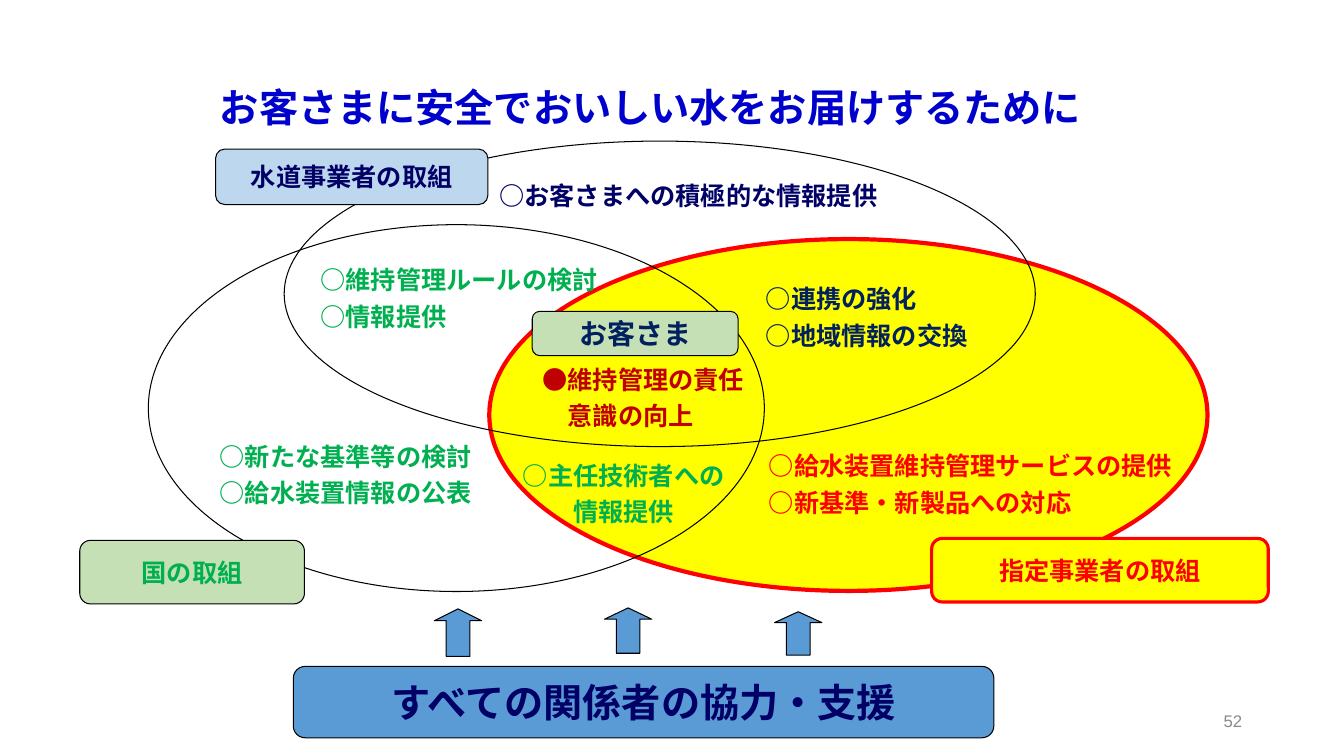
from lxml import etree
from pptx import Presentation
from pptx.dml.color import RGBColor
from pptx.enum.shapes import MSO_SHAPE as SHAPE
from pptx.enum.text import MSO_ANCHOR as ANCHOR, PP_ALIGN as ALIGN
from pptx.oxml.ns import qn
from pptx.util import Pt

BODY_FONT, TITLE_FONT, NUMBER_FONT = "Karla", "Noto Sans CJK JP", "Arial"
BLACK, RED, YELLOW, GREEN = "000000", "FF0000", "FFFF00", "00B050"
NAVY, DARK_BLUE, BLUE, PALE_GREEN = "000066", "002060", "5B9BD5", "C5E0B4"
TITLE_BLUE, PALE_BLUE, DARK_RED, GREY = "0000CC", "BDD7EE", "C00000", "898989"

TITLE = ("お客さまに安全でおいしい水をお届けするために", (150, 53.5, 648, 49.5))
PAGE_NUMBER = ("52", (678.5, 500.5, 216, 28.5))

# box, fill, line colour, line width
CONTRACTOR_CIRCLE = ((349.5, 170.8, 513, 251.3), YELLOW, RED, 3)
UTILITY_CIRCLE = ((203, 100.8, 536.5, 218.2), None, BLACK, 0.75)
STATE_CIRCLE = ((106, 160.5, 440, 262), None, BLACK, 0.75)

# box, colour, lines as (text, indent in characters)
NOTES = [
    ((542.2, 307.5, 316, 76.3), RED,
     [("○給水装置維持管理サービスの提供", 0), ("○新基準・新製品への対応", 0)]),
    ((349.5, 122.4, 290, 34), NAVY, [("○お客さまへの積極的な情報提供", 0)]),
    ((221.8, 190, 242.6, 45.4), GREEN,
     [("○維持管理ルールの検討", 0), ("○情報提供", 0)]),
    ((380.4, 258.8, 170, 50.4), DARK_RED,
     [("●維持管理の責任", 0), ("意識の向上", 1)]),
    ((540, 198, 198.7, 57), DARK_BLUE,
     [("○連携の強化", 0), ("○地域情報の交換", 0)]),
    ((366.5, 327, 165.6, 51), GREEN,
     [("○主任技術者への", 0), ("情報提供", 2)]),
    ((149.8, 306, 224.6, 65.5), GREEN,
     [("○新たな基準等の検討", 0), ("○給水装置情報の公表", 0)]),
]

# text, box, fill, line colour, line width, text size, text colour
LABELS = [
    ("水道事業者の取組", (154, 106.5, 194.5, 39.6), PALE_BLUE, BLACK, 0.75, 18, NAVY),
    ("指定事業者の取組", (665.5, 384.6, 240.5, 45.4), YELLOW, RED, 2.25, 18, RED),
    ("国の取組", (57, 386, 160.5, 45.4), PALE_GREEN, BLACK, 0.75, 18, GREEN),
    ("すべての関係者の協力・支援", (209.5, 476, 500.4, 51), BLUE, BLACK, 0.75, 28, NAVY),
    ("お客さま", (380.2, 222.4, 147, 31.6), PALE_GREEN, BLACK, 0.75, 20, DARK_BLUE),
]

ARROW_LEFT, ARROW_STEP, ARROW_WIDTH = 310.3, 121.5, 33.8
ARROWS = [(434.9, 34), (434.2, 32.4), (437, 31)]  # top, height


def rgb(hex_string):
    return RGBColor.from_string(hex_string)


def points(box):
    return [Pt(v) for v in box]


def add_line(tf, text, size, color, font=BODY_FONT, bold=True, align=ALIGN.LEFT, indent=0):
    """Write one paragraph, reusing the empty one a new frame starts with."""
    p = tf.paragraphs[0]
    if p.runs:
        p = tf.add_paragraph()
        p.space_before = Pt(4.5)
    p.alignment = align
    if indent:
        p._p.get_or_add_pPr().set("marL", str(Pt(indent * size)))
    r = p.add_run()
    r.text = text
    r.font.size, r.font.bold, r.font.name = Pt(size), bold, font
    r.font.color.rgb = rgb(color)
    etree.SubElement(r._r.get_or_add_rPr(), qn("a:ea")).set("typeface", font)
    return p


def add_text_box(box):
    tf = s.shapes.add_textbox(*points(box)).text_frame
    tf.word_wrap = True
    tf.vertical_anchor = ANCHOR.MIDDLE
    return tf


def add_outlined(kind, box, fill, line, width):
    sp = s.shapes.add_shape(kind, *points(box))
    sp.shadow.inherit = False
    if fill:
        sp.fill.solid()
        sp.fill.fore_color.rgb = rgb(fill)
    else:
        sp.fill.background()
    sp.line.color.rgb = rgb(line)
    sp.line.width = Pt(width)
    return sp


prs = Presentation()
prs.slide_width, prs.slide_height = Pt(960), Pt(540)
s = prs.slides.add_slide(prs.slide_layouts[6])

for circle in (CONTRACTOR_CIRCLE, UTILITY_CIRCLE, STATE_CIRCLE):
    add_outlined(SHAPE.OVAL, *circle)

text, box = TITLE
add_line(add_text_box(box), text, 28, TITLE_BLUE, TITLE_FONT).line_spacing = 0.9

text, box = PAGE_NUMBER
add_line(add_text_box(box), text, 12, GREY, NUMBER_FONT, False, ALIGN.RIGHT)

for box, color, lines in NOTES:
    tf = add_text_box(box)
    for text, indent in lines:
        add_line(tf, text, 18, color, indent=indent)

for text, box, fill, line, width, size, color in LABELS:
    tf = add_outlined(SHAPE.ROUNDED_RECTANGLE, box, fill, line, width).text_frame
    tf.vertical_anchor = ANCHOR.MIDDLE
    add_line(tf, text, size, color, align=ALIGN.CENTER)

for i, (top, height) in enumerate(ARROWS):
    box = (ARROW_LEFT + i * ARROW_STEP, top, ARROW_WIDTH, height)
    arrow = add_outlined(SHAPE.UP_ARROW, box, BLUE, BLACK, 0.75)
    arrow.adjustments[1] = 0.25

prs.save("out.pptx")
